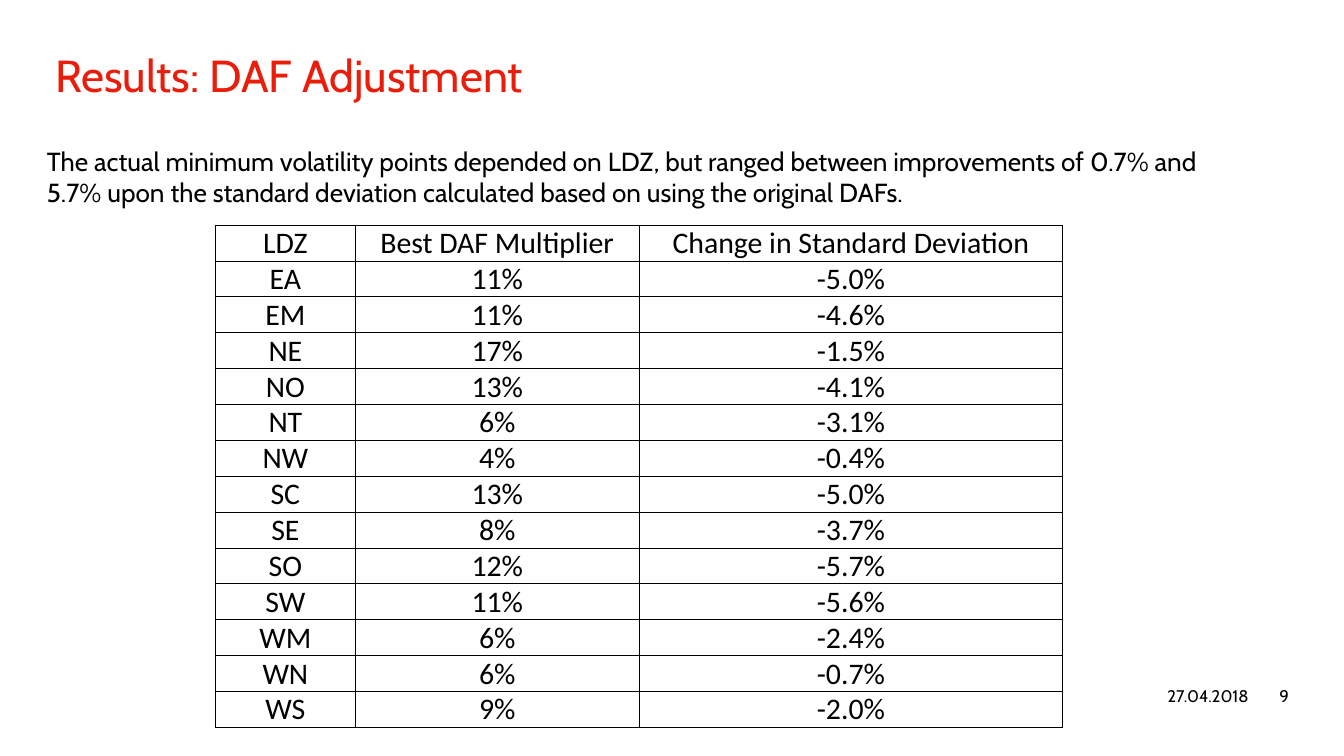
"""Build the DAF adjustment results slide."""
from dataclasses import dataclass
from typing import Optional

from lxml import etree
from pptx import Presentation
from pptx.dml.color import RGBColor
from pptx.enum.text import MSO_ANCHOR, PP_ALIGN
from pptx.oxml.ns import qn
from pptx.util import Pt

LEFT, CENTER, RIGHT = PP_ALIGN.LEFT, PP_ALIGN.CENTER, PP_ALIGN.RIGHT
TOP, BOTTOM = MSO_ANCHOR.TOP, MSO_ANCHOR.BOTTOM
COLORS = {"title": "EA1C0A", "text": "000000", "border": "000000"}
TITLE_ONLY_LAYOUT = 5
COLUMN_WIDTHS = (75, 152, 227)
ROW_HEIGHT = 19.2
BORDER_WIDTH = 0.5
RESULTS = (
    ("LDZ", "Best DAF Multiplier", "Change in Standard Deviation"),
    ("EA", "11%", "-5.0%"),
    ("EM", "11%", "-4.6%"),
    ("NE", "17%", "-1.5%"),
    ("NO", "13%", "-4.1%"),
    ("NT", "6%", "-3.1%"),
    ("NW", "4%", "-0.4%"),
    ("SC", "13%", "-5.0%"),
    ("SE", "8%", "-3.7%"),
    ("SO", "12%", "-5.7%"),
    ("SW", "11%", "-5.6%"),
    ("WM", "6%", "-2.4%"),
    ("WN", "6%", "-0.7%"),
    ("WS", "9%", "-2.0%"),
)


@dataclass(frozen=True)
class TextStyle:
    size: float
    font: str = "Cabin"
    color: str = "text"
    align: PP_ALIGN = LEFT
    line_spacing: Optional[float] = None


@dataclass(frozen=True)
class TextBlock:
    text: str
    left: float
    top: float
    width: float
    height: float
    style: TextStyle
    margins: tuple[float, float] = (0, 0)


FOOTER_STYLE = TextStyle(9, align=RIGHT, line_spacing=11.2)
CELL_STYLE = TextStyle(16, font="Calibri", align=CENTER)
TITLE = TextBlock("Results: DAF Adjustment", 29.5, 29.5, 433.4, 56.9,
                  TextStyle(24, color="title", line_spacing=25))
TEXT_BLOCKS = (
    TextBlock("27.04.2018", 609.1, 367.2, 59.8, 11.5, FOOTER_STYLE),
    TextBlock("9", 668.9, 367.2, 21.6, 11.5, FOOTER_STYLE),
    TextBlock("The actual minimum volatility points depended on LDZ, but ranged between "
              "improvements of 0.7% and 5.7% upon the standard deviation calculated "
              "based on using the original DAFs.",
              18, 74.2, 658.8, 41, TextStyle(14), (7.2, 3.6)),
)


def write_text(text_frame, text: str, style: TextStyle) -> None:
    paragraph = text_frame.paragraphs[0]
    paragraph.alignment = style.align
    if style.line_spacing:
        paragraph.line_spacing = Pt(style.line_spacing)
    run = paragraph.add_run()
    run.text = text
    run.font.name = style.font
    run.font.size = Pt(style.size)
    run.font.bold = False
    run.font.color.rgb = RGBColor.from_string(COLORS[style.color])


def set_margins(target, horizontal: float, vertical: float) -> None:
    target.margin_left = target.margin_right = Pt(horizontal)
    target.margin_top = target.margin_bottom = Pt(vertical)


def fill_block(shape, block: TextBlock) -> None:
    shape.left, shape.top = Pt(block.left), Pt(block.top)
    shape.width, shape.height = Pt(block.width), Pt(block.height)
    text_frame = shape.text_frame
    text_frame.word_wrap = True
    text_frame.vertical_anchor = TOP
    set_margins(text_frame, *block.margins)
    write_text(text_frame, block.text, block.style)


def set_borders(cell) -> None:
    properties = cell._tc.get_or_add_tcPr()
    for position, side in enumerate(("a:lnL", "a:lnR", "a:lnT", "a:lnB")):
        line = etree.Element(qn(side), w=str(Pt(BORDER_WIDTH)))
        fill = etree.SubElement(line, qn("a:solidFill"))
        etree.SubElement(fill, qn("a:srgbClr"), val=COLORS["border"])
        properties.insert(position, line)


def add_results_table(slide, left: float, top: float) -> None:
    shape = slide.shapes.add_table(len(RESULTS), len(COLUMN_WIDTHS), Pt(left), Pt(top),
                                   Pt(sum(COLUMN_WIDTHS)), Pt(ROW_HEIGHT * len(RESULTS)))
    table = shape.table
    table.first_row = table.horz_banding = False
    for column, width in zip(table.columns, COLUMN_WIDTHS):
        column.width = Pt(width)
    for row, values in zip(table.rows, RESULTS):
        row.height = Pt(ROW_HEIGHT)
        for cell, value in zip(row.cells, values):
            cell.fill.background()
            cell.vertical_anchor = BOTTOM
            set_margins(cell, 0, 0)
            set_borders(cell)
            write_text(cell.text_frame, value, CELL_STYLE)


def main() -> None:
    presentation = Presentation()
    presentation.slide_width, presentation.slide_height = Pt(720), Pt(405)
    slide = presentation.slides.add_slide(presentation.slide_layouts[TITLE_ONLY_LAYOUT])
    fill_block(slide.shapes.title, TITLE)
    for block in TEXT_BLOCKS:
        shape = slide.shapes.add_textbox(0, 0, 0, 0)
        fill_block(shape, block)
    add_results_table(slide, 115.4, 120.6)
    presentation.save("out.pptx")


if __name__ == "__main__":
    main()
